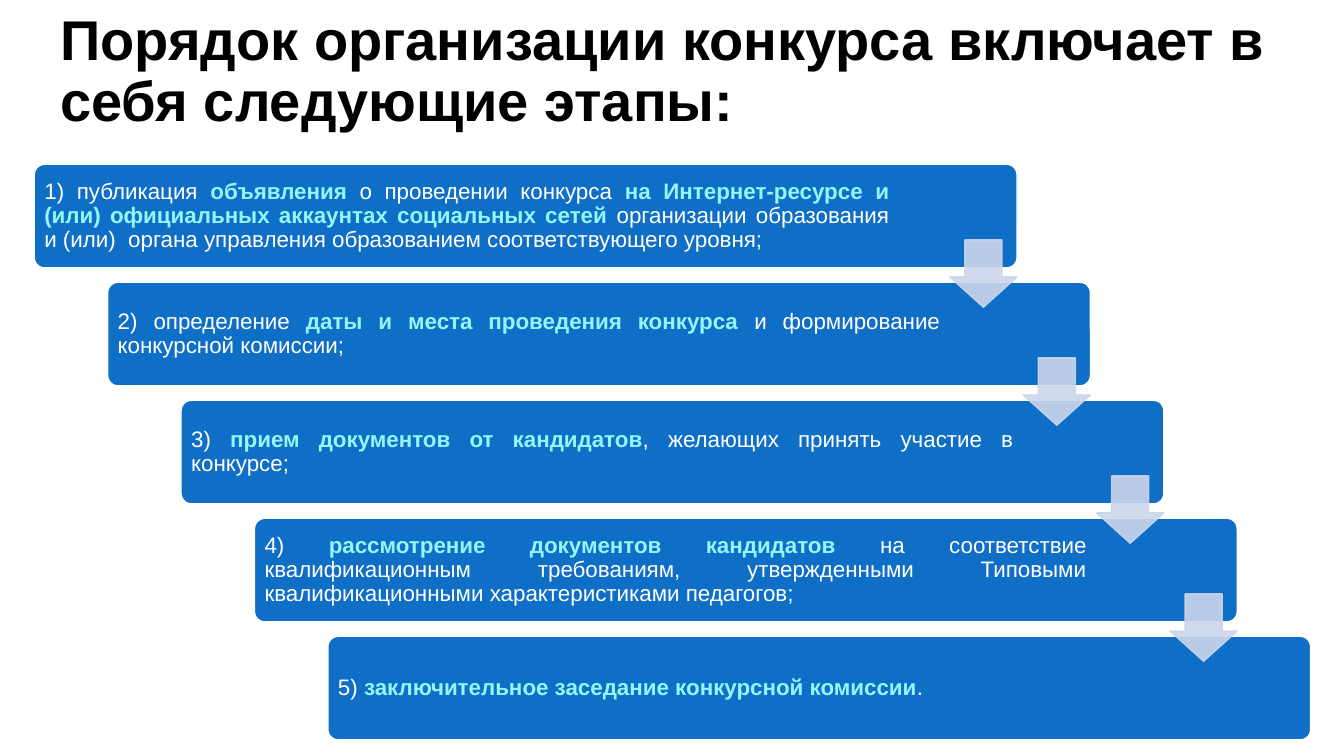
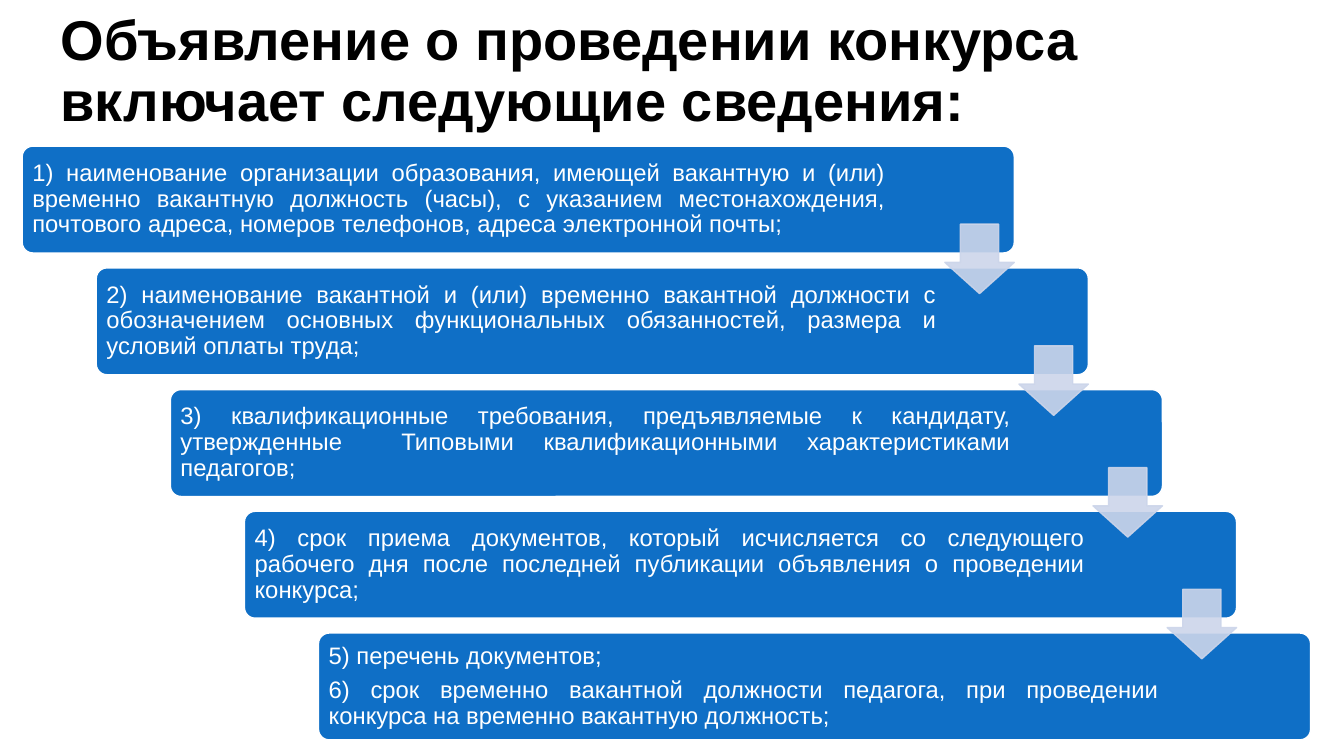
"""Builds two slides that show the stages and the announcement of a competition."""
import pptx
import pptx.dml.color
import pptx.enum.shapes
import pptx.enum.text
import pptx.oxml
import pptx.oxml.ns
import pptx.util

BLACK = pptx.dml.color.RGBColor(0x00, 0x00, 0x00)
WHITE = pptx.dml.color.RGBColor(0xFF, 0xFF, 0xFF)
BLUE = pptx.dml.color.RGBColor(0x0F, 0x6F, 0xC6)
AQUA = pptx.dml.color.RGBColor(0x94, 0xF5, 0xFA)
PALE = pptx.dml.color.RGBColor(0xCC, 0xD5, 0xEA)

SHAPE = pptx.enum.shapes.MSO_SHAPE
ALIGN = pptx.enum.text.PP_ALIGN
MIDDLE = pptx.enum.text.MSO_ANCHOR.MIDDLE

STAGES = [
    [["1) публикация ", "объявления", " о проведении конкурса ",
      "на Интернет-ресурсе и (или) официальных аккаунтах социальных сетей ",
      "организации образования и (или)  органа управления образованием "
      "соответствующего уровня;"]],
    [["2) определение ", "даты и места проведения конкурса ",
      "и формирование конкурсной комиссии;"]],
    [["3) ", "прием документов от кандидатов",
      ", желающих принять участие в конкурсе;"]],
    [["4) ", "рассмотрение документов кандидатов ",
      "на соответствие квалификационным требованиям, утвержденными Типовыми "
      "квалификационными характеристиками педагогов;"]],
    [["5) ", "заключительное заседание конкурсной комиссии", "."]],
]
DETAILS = [
    [["1) наименование организации образования, имеющей вакантную и (или) "
      "временно вакантную должность (часы), с указанием местонахождения, "
      "почтового адреса, номеров телефонов, адреса электронной почты;"]],
    [["2) наименование вакантной и (или) временно вакантной должности с "
      "обозначением основных функциональных обязанностей, размера и условий "
      "оплаты труда;"]],
    [["3) квалификационные требования, предъявляемые к кандидату, утвержденные"
      "  Типовыми квалификационными характеристиками педагогов;"]],
    [["4) срок приема документов, который исчисляется со следующего рабочего "
      "дня после последней публикации объявления о проведении конкурса;"]],
    [["5) перечень документов;"],
     ["6) срок временно вакантной должности педагога, при проведении конкурса "
      "на временно вакантную должность;"]],
]


class Board:
    """Holds the style and the current slide; lengths are percent of the slide."""

    font = "Arial"
    right, bottom = 97.52, 97.87
    bar_width, bar_height = 0.77, 0.18
    arrow_size, arrow_drop = 0.65, 0.73
    first_room, other_room = 12.7, 15

    def __init__(self):
        """Start an empty widescreen deck."""
        self.deck = pptx.Presentation()
        self.deck.slide_width = pptx.util.Inches(13.33)
        self.deck.slide_height = pptx.util.Inches(7.5)
        self.page = None

    def across(self, share):
        """Turn a percent of the slide width into a length."""
        return round(self.deck.slide_width * share / 100)

    def down(self, share):
        """Turn a percent of the slide height into a length."""
        return round(self.deck.slide_height * share / 100)

    def span(self, para, text, size, color, bold):
        """Add one run to a paragraph."""
        span = para.add_run()
        span.text = text
        span.font.name = self.font
        span.font.size = pptx.util.Pt(size)
        span.font.bold = bold
        span.font.color.rgb = color

    def start(self, title):
        """Add a slide and set its title."""
        self.page = self.deck.slides.add_slide(self.deck.slide_layouts[5])
        box = self.page.shapes.title
        box.left, box.top = self.across(3.75), 0
        box.width, box.height = self.across(92.05), self.down(19.33)
        frame = box.text_frame
        frame.word_wrap = True
        frame.auto_size = pptx.enum.text.MSO_AUTO_SIZE.NONE
        frame.vertical_anchor = MIDDLE
        para = frame.paragraphs[0]
        para.alignment = ALIGN.LEFT
        para.line_spacing = 0.9
        self.span(para, title, 40, BLACK, True)

    def shape(self, kind, place, fill, line, adjustments):
        """Add a flat preset shape."""
        shape = self.page.shapes.add_shape(kind, *place)
        shape.shadow.inherit = False
        shape.fill.solid()
        shape.fill.fore_color.rgb = fill
        shape.line.color.rgb = line
        shape.line.width = pptx.util.Pt(1)
        for index, value in enumerate(adjustments):
            shape.adjustments[index] = value
        return shape

    def bar(self, place, paragraphs, size, room):
        """Add a step whose runs alternate between plain and highlighted."""
        bar = self.shape(SHAPE.ROUNDED_RECTANGLE, place, BLUE, WHITE, [0.1])
        frame = bar.text_frame
        frame.word_wrap = True
        frame.vertical_anchor = MIDDLE
        frame.margin_left = frame.margin_top = frame.margin_bottom = pptx.util.Inches(0.07)
        frame.margin_right = round(bar.width * room / 100)
        for number, texts in enumerate(paragraphs):
            para = frame.add_paragraph() if number else frame.paragraphs[0]
            para.alignment = ALIGN.JUSTIFY
            para.line_spacing = 0.9
            para.space_before = pptx.util.Pt(6 if number else 0)
            for index, text in enumerate(texts):
                bright = index % 2 == 1
                self.span(para, text, size, AQUA if bright else WHITE, bright)
        return bar

    def arrow(self, bar):
        """Add a translucent arrow at the lower right of a step."""
        size = round(bar.height * self.arrow_size)
        place = (bar.left + bar.width - size,
                 bar.top + round(bar.height * self.arrow_drop), size, size)
        arrow = self.shape(SHAPE.DOWN_ARROW, place, PALE, PALE, [0.55, 0.45])
        for color in arrow.element.spPr.iter(pptx.oxml.ns.qn("a:srgbClr")):
            alpha = pptx.oxml.parse_xml(
                f'<a:alpha {pptx.oxml.ns.nsdecls("a")} val="90000"/>')
            color.append(alpha)

    def staircase(self, left, top, size, steps):
        """Spread steps evenly to the lower right corner and link them."""
        wide, high = self.right - left, self.bottom - top
        width, height = wide * self.bar_width, high * self.bar_height
        shift = (wide - width) / (len(steps) - 1)
        drop = (high - height) / (len(steps) - 1)
        bars = []
        for index, paragraphs in enumerate(steps):
            place = (self.across(left + index * shift), self.down(top + index * drop),
                     self.across(width), self.down(height))
            room = self.other_room if index else self.first_room
            bars.append(self.bar(place, paragraphs, size, room))
        for bar in bars[:-1]:
            self.arrow(bar)


def main():
    """Build and save the deck."""
    board = Board()
    board.start("Порядок организации конкурса включает в себя следующие этапы:")
    board.staircase(2.55, 21.73, 16, STAGES)
    board.start("Объявление о проведении конкурса включает следующие сведения:")
    board.staircase(1.65, 19.33, 17, DETAILS)
    board.deck.save("out.pptx")


if __name__ == "__main__":
    main()
